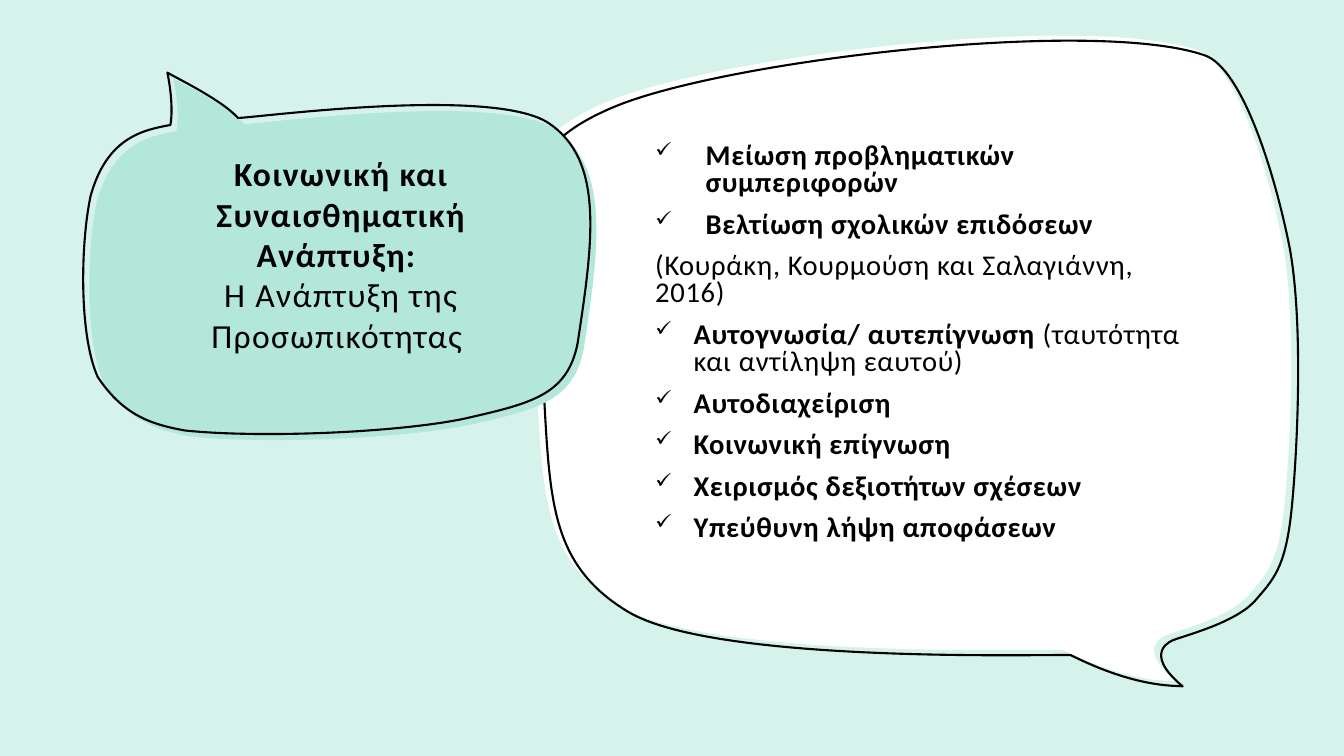
from math import cos, radians, sin

from lxml.etree import SubElement
from pptx import Presentation
from pptx.dml.color import RGBColor
from pptx.enum.shapes import MSO_SHAPE
from pptx.enum.text import MSO_ANCHOR, PP_ALIGN
from pptx.oxml.ns import qn
from pptx.util import Inches, Pt

# The slide is a grid of 1333 columns by 750 rows; every length is in cells.
CELL = Inches(0.01)
COLUMNS, ROWS = 1333, 750
BACKGROUND, MINT, WHITE, BLACK = "D5F2EB", "B2E7DA", "FFFFFF", "000000"

# Outlines: a start point, then curves of two control points and an end point
LIST_BUBBLE = [
    (632, 589),
    (645, 584), (692, 572), (712, 551),
    (731, 529), (743, 518), (749, 460),
    (755, 401), (761, 274), (747, 199),
    (732, 124), (700, 22), (663, 9),
    (554, -29), (184, 14), (75, 61),
    (-35, 108), (-5, 165), (4, 290),
    (15, 433), (3, 508), (91, 561),
    (178, 613), (507, 603), (530, 604),
    (596, 637), (634, 634), (641, 635),
    (599, 600), (632, 589), (632, 589),
]
TITLE_BUBBLE = [
    (87, 14),
    (95, 19), (141, 41), (157, 59),
    (173, 59), (409, 27), (465, 64),
    (521, 101), (509, 183), (494, 282),
    (484, 334), (448, 342), (383, 357),
    (318, 371), (180, 377), (104, 369),
    (72, 363), (44, 355), (18, 316),
    (-1, 274), (1, 182), (11, 136),
    (27, 79), (62, 71), (90, 66),
    (90, 66), (94, 49), (87, 14),
]

TITLE_RUNS = [
    ("Κοινωνική και Συναισθηματική Ανάπτυξη: \v", True),
    ("Η Ανάπτυξη της\vΠροσωπικότητας ", False),
]
# Each item: indent in cells (0 for no bullet) and its runs
ITEMS = [
    (50, [("Μείωση προβληματικών συμπεριφορών", True)]),
    (50, [("Βελτίωση σχολικών επιδόσεων", True)]),
    (0, [("(Κουράκη, Κουρμούση και Σαλαγιάννη, 2016)", False)]),
    (38, [("Αυτογνωσία/ αυτεπίγνωση ", True),
          ("(ταυτότητα και αντίληψη εαυτού)", False)]),
    (38, [("Αυτοδιαχείριση", True)]),
    (38, [("Κοινωνική επίγνωση", True)]),
    (38, [("Χειρισμός δεξιοτήτων σχέσεων", True)]),
    (38, [("Υπεύθυνη λήψη αποφάσεων", True)]),
]


def color(value):
    return RGBColor.from_string(value)


def apply_format(target, values):
    for name, value in values.items():
        setattr(target, name, value)


def straighten(outline, width, height, rotation):
    """Turn the outline back, because the shape itself is rotated."""
    cosine, sine = cos(radians(rotation)), sin(radians(rotation))
    for x, y in outline:
        x, y = x - width / 2, y - height / 2
        yield (round((width / 2 + x * cosine + y * sine) * CELL),
               round((height / 2 - x * sine + y * cosine) * CELL))


def set_curves(shape, points):
    """Replace the straight segments of a freeform by cubic curves."""
    geometry = shape._element.xpath(".//a:path")[0]
    for child in list(geometry):
        geometry.remove(child)
    geometry.set("w", str(shape.width))
    geometry.set("h", str(shape.height))
    groups = [("a:moveTo", points[:1])]
    groups += [("a:cubicBezTo", points[index:index + 3])
               for index in range(1, len(points), 3)]
    for tag, corners in groups:
        segment = SubElement(geometry, qn(tag))
        for x, y in corners:
            corner = SubElement(segment, qn("a:pt"))
            corner.set("x", str(x))
            corner.set("y", str(y))
    SubElement(geometry, qn("a:close"))


def add_bubble(slide, box, outline, rotation, fill=None):
    """Draw a tilted bubble, filled if a fill is given and outlined otherwise."""
    left, top, width, height = box
    points = list(straighten(outline, width, height, rotation))
    builder = slide.shapes.build_freeform(*points[0])
    builder.add_line_segments(points[3::3], close=True)
    shape = builder.convert_to_shape()
    apply_format(shape, {"left": left * CELL, "top": top * CELL,
                         "width": width * CELL, "height": height * CELL,
                         "rotation": rotation})
    set_curves(shape, points)
    shape.shadow.inherit = False
    if fill:
        shape.fill.solid()
        shape.fill.fore_color.rgb = color(fill)
        shape.line.fill.background()
    else:
        shape.fill.background()
        shape.line.color.rgb = color(BLACK)
        shape.line.width = Pt(1.5)


def add_backdrop(slide, box):
    shape = slide.shapes.add_shape(MSO_SHAPE.RECTANGLE, *(length * CELL for length in box))
    shape.shadow.inherit = False
    shape.line.fill.background()
    for fill in (shape.fill, slide.background.fill):
        fill.solid()
        fill.fore_color.rgb = color(BACKGROUND)


def add_text_box(slide, box, bottom_margin):
    frame = slide.shapes.add_textbox(*(length * CELL for length in box)).text_frame
    apply_format(frame, {"word_wrap": True, "vertical_anchor": MSO_ANCHOR.MIDDLE,
                         "margin_bottom": bottom_margin * CELL})
    return frame


def add_runs(paragraph, runs, size, spacing):
    for text, bold in runs:
        for number, line in enumerate(text.split("\v")):
            if number:
                paragraph.add_line_break()
            if not line:
                continue
            run = paragraph.add_run()
            run.text = line
            apply_format(run.font, {"name": "Calibri", "size": Pt(size), "bold": bold})
            run.font.color.rgb = color(BLACK)
            run.font._element.set("spc", str(int(spacing * 100)))


def add_check_mark(paragraph, indent):
    properties = paragraph._p.get_or_add_pPr()
    properties.set("marL", str(indent * CELL))
    properties.set("indent", str(-indent * CELL))
    # The check mark sits at the letter ü in the symbol font
    for tag, name, value in (("a:buSzPct", "val", "73000"),
                             ("a:buFont", "typeface", "Wingdings"),
                             ("a:buChar", "char", "ü")):
        SubElement(properties, qn(tag)).set(name, value)


def add_title(slide, box):
    paragraph = add_text_box(slide, box, bottom_margin=45).paragraphs[0]
    apply_format(paragraph, {"alignment": PP_ALIGN.CENTER, "line_spacing": 1.0})
    add_runs(paragraph, TITLE_RUNS, size=24, spacing=1)


def add_list(slide, box):
    frame = add_text_box(slide, box, bottom_margin=33)
    for number, (indent, runs) in enumerate(ITEMS):
        paragraph = frame.add_paragraph() if number else frame.paragraphs[0]
        apply_format(paragraph, {"line_spacing": 0.8,
                                 "space_before": Pt(10 if number else 0)})
        if indent:
            add_check_mark(paragraph, indent)
        add_runs(paragraph, runs, size=20.4, spacing=0.5)


def build_slide(presentation):
    slide = presentation.slides.add_slide(presentation.slide_layouts[6])
    add_backdrop(slide, (0, 0, COLUMNS, ROWS))

    # White bubble behind the list
    add_bubble(slide, (525, 41, 756, 646), LIST_BUBBLE, 357.5, WHITE)
    add_bubble(slide, (532, 46, 756, 646), LIST_BUBBLE, 357.5)

    # Mint bubble with the title
    add_bubble(slide, (85, 64, 509, 372), TITLE_BUBBLE, 354.9, MINT)
    add_title(slide, (134, 158, 409, 228))
    add_bubble(slide, (79, 58, 509, 372), TITLE_BUBBLE, 354.9)

    # Checked list
    add_list(slide, (640, 124, 558, 461))


def main():
    presentation = Presentation()
    presentation.slide_width = COLUMNS * CELL
    presentation.slide_height = ROWS * CELL
    build_slide(presentation)
    presentation.save("out.pptx")


if __name__ == "__main__":
    main()
